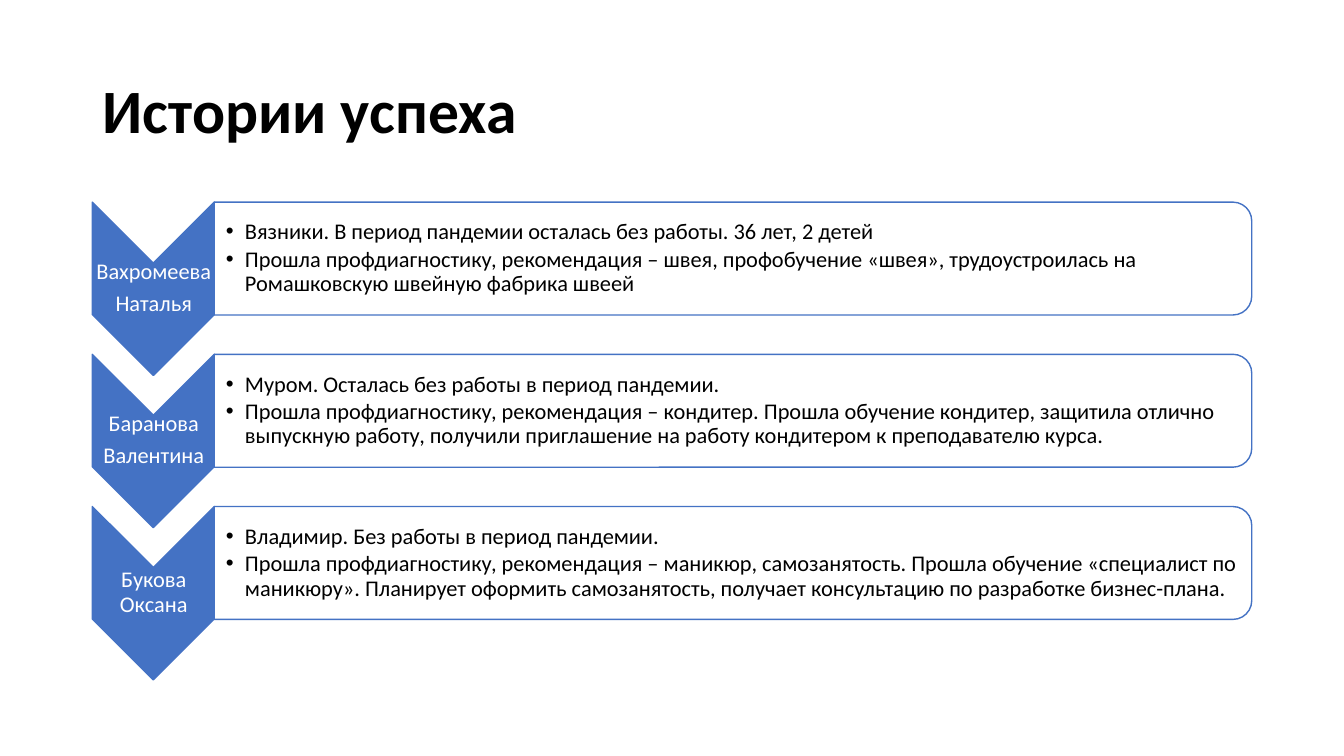
from dataclasses import dataclass

from lxml.etree import SubElement
from pptx import Presentation
from pptx.dml.color import RGBColor
from pptx.enum.shapes import MSO_SHAPE as Shape
from pptx.enum.text import MSO_ANCHOR as Anchor, PP_ALIGN as Align
from pptx.oxml.ns import qn
from pptx.util import Pt

PX = 9144  # EMU, 100 px to the inch
PITCH = 151
FONT = "Calibri"
COLORS = {"blue": "4472C4", "white": "FFFFFF", "black": "000000"}


@dataclass(frozen=True)
class Box:
    left: int
    top: int
    width: int
    height: int

    def down(self, step: int) -> "Box":
        return Box(self.left, self.top + step, self.width, self.height)

    def emu(self) -> list[int]:
        return [v * PX for v in (self.left, self.top, self.width, self.height)]


@dataclass(frozen=True)
class Style:
    size: int
    color: str
    after: float = 0
    align: Align = Align.LEFT
    bold: bool = False
    bullet: bool = False
    insets: tuple[int, int, int, int] = (1, 1, 1, 1)


@dataclass(frozen=True)
class Story:
    name: list[str]
    facts: list[str]


# Boxes of the first row; arrow and panel are given before their quarter turn
TITLE = Box(92, 40, 1150, 145)
ARROW = Box(66, 226, 172, 121)
NAME = Box(92, 260, 121, 52)
PANEL = Box(671, -258, 112, 1029)
FACTS = Box(212, 206, 1024, 101)

HEAD = Style(44, "black", bold=True, insets=(10, 5, 10, 5))
LABEL = Style(16, "white", after=5.6, align=Align.CENTER)
LIST = Style(16, "black", after=2.4, bullet=True, insets=(12, 1, 1, 1))

STORIES = [
    Story(
        ["Вахромеева", "Наталья"],
        ["Вязники. В период пандемии осталась без работы. 36 лет, 2 детей",
         "Прошла профдиагностику, рекомендация – швея, профобучение «швея», "
         "трудоустроилась на Ромашковскую швейную фабрика швеей"],
    ),
    Story(
        ["Баранова", "Валентина"],
        ["Муром. Осталась без работы в период пандемии.",
         "Прошла профдиагностику, рекомендация – кондитер. Прошла обучение "
         "кондитер, защитила отлично выпускную работу, получили приглашение "
         "на работу кондитером к преподавателю курса."],
    ),
    Story(
        ["Букова Оксана"],
        ["Владимир. Без работы в период пандемии.",
         "Прошла профдиагностику, рекомендация – маникюр, самозанятость. "
         "Прошла обучение «специалист по маникюру». Планирует оформить "
         "самозанятость, получает консультацию по разработке бизнес-плана."],
    ),
]


def rgb(name: str) -> RGBColor:
    return RGBColor.from_string(COLORS[name])


def add_text(slide, box: Box, lines: list[str], style: Style) -> None:
    frame = slide.shapes.add_textbox(*box.emu()).text_frame
    frame.word_wrap = True
    frame.vertical_anchor = Anchor.MIDDLE
    (frame.margin_left, frame.margin_top,
     frame.margin_right, frame.margin_bottom) = [v * PX for v in style.insets]
    frame.text = "\n".join(lines)
    for para in frame.paragraphs:
        para.alignment = style.align
        para.line_spacing = 0.9
        para.space_after = Pt(style.after)
        if style.bullet:
            add_bullet(para)
        font = para.font
        font.name = FONT
        font.size = Pt(style.size)
        font.bold = style.bold
        font.color.rgb = rgb(style.color)


def add_bullet(para) -> None:
    props = para._p.get_or_add_pPr()
    props.set("marL", str(19 * PX))
    props.set("indent", str(-19 * PX))
    SubElement(props, qn("a:buFont"), typeface="Arial")
    SubElement(props, qn("a:buChar"), char="•")


def add_turned(slide, kind: Shape, box: Box, fill: str, alpha: int = 100) -> None:
    shape = slide.shapes.add_shape(kind, *box.emu())
    shape.rotation = 90
    shape.shadow.inherit = False
    shape.fill.solid()
    shape.fill.fore_color.rgb = rgb(fill)
    shape.line.color.rgb = rgb("blue")
    shape.line.width = Pt(1)
    if alpha < 100:
        color = shape._element.spPr.find(qn("a:solidFill"))[0]
        SubElement(color, qn("a:alpha"), val=str(alpha * 1000))


def main() -> None:
    deck = Presentation()
    deck.slide_width, deck.slide_height = 1333 * PX, 750 * PX
    slide = deck.slides.add_slide(deck.slide_layouts[6])

    # Title
    add_text(slide, TITLE, ["Истории успеха"], HEAD)

    # One row for each story
    for row, story in enumerate(STORIES):
        step = row * PITCH
        add_turned(slide, Shape.CHEVRON, ARROW.down(step), "blue")
        add_text(slide, NAME.down(step), story.name, LABEL)
        add_turned(slide, Shape.ROUND_2_SAME_RECTANGLE, PANEL.down(step),
                   "white", 90)
        add_text(slide, FACTS.down(step), story.facts, LIST)

    deck.save("out.pptx")


if __name__ == "__main__":
    main()
